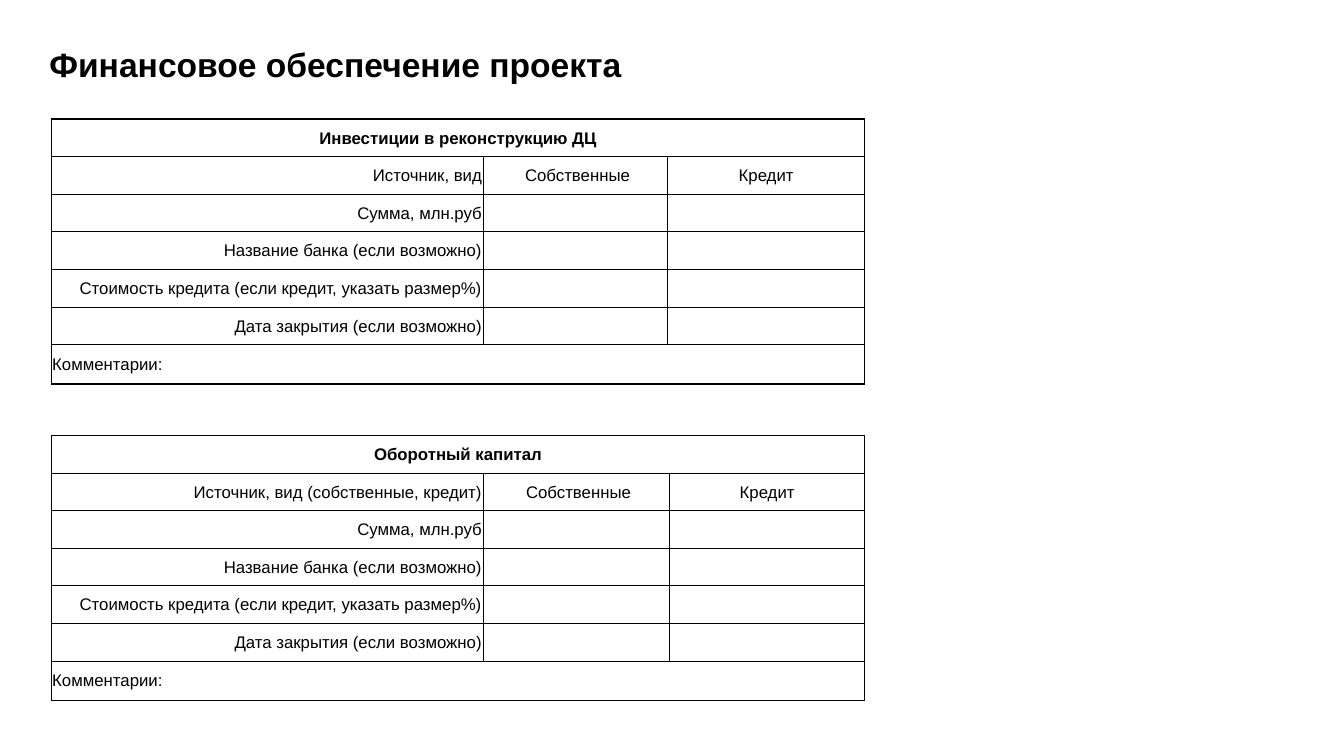
from dataclasses import dataclass

import pptx
import pptx.dml.color
import pptx.enum.text
import pptx.oxml
import pptx.oxml.ns
import pptx.util

Pt = pptx.util.Pt
Align = pptx.enum.text.PP_ALIGN
Anchor = pptx.enum.text.MSO_ANCHOR


@dataclass(frozen=True)
class Theme:
    font: str = "Arial"
    ink: str = "000000"
    title_size: float = 24
    table_size: float = 12
    thin: float = 0.5
    thick: float = 1


@dataclass(frozen=True)
class FundingTable:
    heading: str
    source_label: str
    top: float
    column_widths: tuple[float, float, float]


THEME = Theme()
LEFT = 36.72
ROW_HEIGHT, COMMENT_HEIGHT = 26.86, 28.2
FUNDING_KINDS = (" Собственные", "Кредит")
SHARED_LABELS = (
    "Сумма, млн.руб",
    "Название банка (если возможно)",
    "Стоимость кредита (если кредит, указать размер%)",
    "Дата закрытия (если возможно)",
)
FUNDING_TABLES = (
    FundingTable("Инвестиции в реконструкцию ДЦ", "Источник, вид",
                 85, (308.2, 132, 140.8)),
    FundingTable("Оборотный капитал", "Источник, вид (собственные, кредит)",
                 311, (308.2, 133.4, 139.4)),
)


def write(frame, text: str, *, size: float = THEME.table_size,
          bold: bool = False, align=Align.LEFT) -> None:
    """Put one formatted paragraph into a text frame."""
    paragraph = frame.paragraphs[0]
    paragraph.alignment = align
    run = paragraph.add_run()
    run.text = text
    run.font.name = THEME.font
    run.font.size = Pt(size)
    run.font.bold = bold
    run.font.color.rgb = pptx.dml.color.RGBColor.from_string(THEME.ink)


def set_borders(cell, widths: dict[str, float]) -> None:
    """Draw cell borders; sides are L, R, T, B in schema order."""
    properties = cell._tc.get_or_add_tcPr()
    for side, width in widths.items():
        properties.append(pptx.oxml.parse_xml(
            f'<a:ln{side} {pptx.oxml.ns.nsdecls("a")} w="{Pt(width)}">'
            f'<a:solidFill><a:srgbClr val="{THEME.ink}"/></a:solidFill>'
            f'</a:ln{side}>'))


def add_funding_table(slide, funding: FundingTable) -> None:
    labels = (funding.source_label, *SHARED_LABELS)
    row_heights = [ROW_HEIGHT] * (len(labels) + 1) + [COMMENT_HEIGHT]
    last_row = len(row_heights) - 1
    table = slide.shapes.add_table(
        len(row_heights), len(funding.column_widths), Pt(LEFT), Pt(funding.top),
        Pt(sum(funding.column_widths)), Pt(sum(row_heights))).table
    table.first_row = table.horz_banding = False
    for column, width in zip(table.columns, funding.column_widths):
        column.width = Pt(width)
    for row, height in zip(table.rows, row_heights):
        row.height = Pt(height)

    # Cell grid with a heavier outer edge
    for r, row in enumerate(table.rows):
        for c, cell in enumerate(row.cells):
            set_borders(cell, {
                "L": THEME.thick if c == 0 else THEME.thin,
                "R": THEME.thin,
                "T": THEME.thick if r == 0 else THEME.thin,
                "B": THEME.thick if r == last_row else THEME.thin,
            })
            cell.fill.background()
            cell.vertical_anchor = Anchor.MIDDLE
            cell.margin_left = cell.margin_right = cell.margin_top = Pt(0.6)
            cell.margin_bottom = Pt(0)

    # Heading and comment rows span the table
    for r in (0, last_row):
        table.cell(r, 0).merge(table.cell(r, len(funding.column_widths) - 1))
    write(table.cell(0, 0).text_frame, funding.heading,
          bold=True, align=Align.CENTER)
    write(table.cell(last_row, 0).text_frame, "Комментарии:")

    # Row labels and funding kinds
    for r, label in enumerate(labels, start=1):
        write(table.cell(r, 0).text_frame, label, align=Align.RIGHT)
    for c, kind in enumerate(FUNDING_KINDS, start=1):
        write(table.cell(1, c).text_frame, kind, align=Align.CENTER)


def main() -> None:
    presentation = pptx.Presentation()
    presentation.slide_width, presentation.slide_height = Pt(960), Pt(540)
    slide = presentation.slides.add_slide(presentation.slide_layouts[5])

    # Title
    title = slide.shapes.title
    title.left, title.top, title.width, title.height = (
        Pt(28.08), Pt(28.08), Pt(828), Pt(56.88))
    title.text_frame.auto_size = pptx.enum.text.MSO_AUTO_SIZE.NONE
    title.text_frame.vertical_anchor = Anchor.TOP
    write(title.text_frame, "Финансовое обеспечение проекта",
          size=THEME.title_size, bold=True)

    # Funding tables
    for funding in FUNDING_TABLES:
        add_funding_table(slide, funding)

    presentation.save("out.pptx")


if __name__ == "__main__":
    main()
